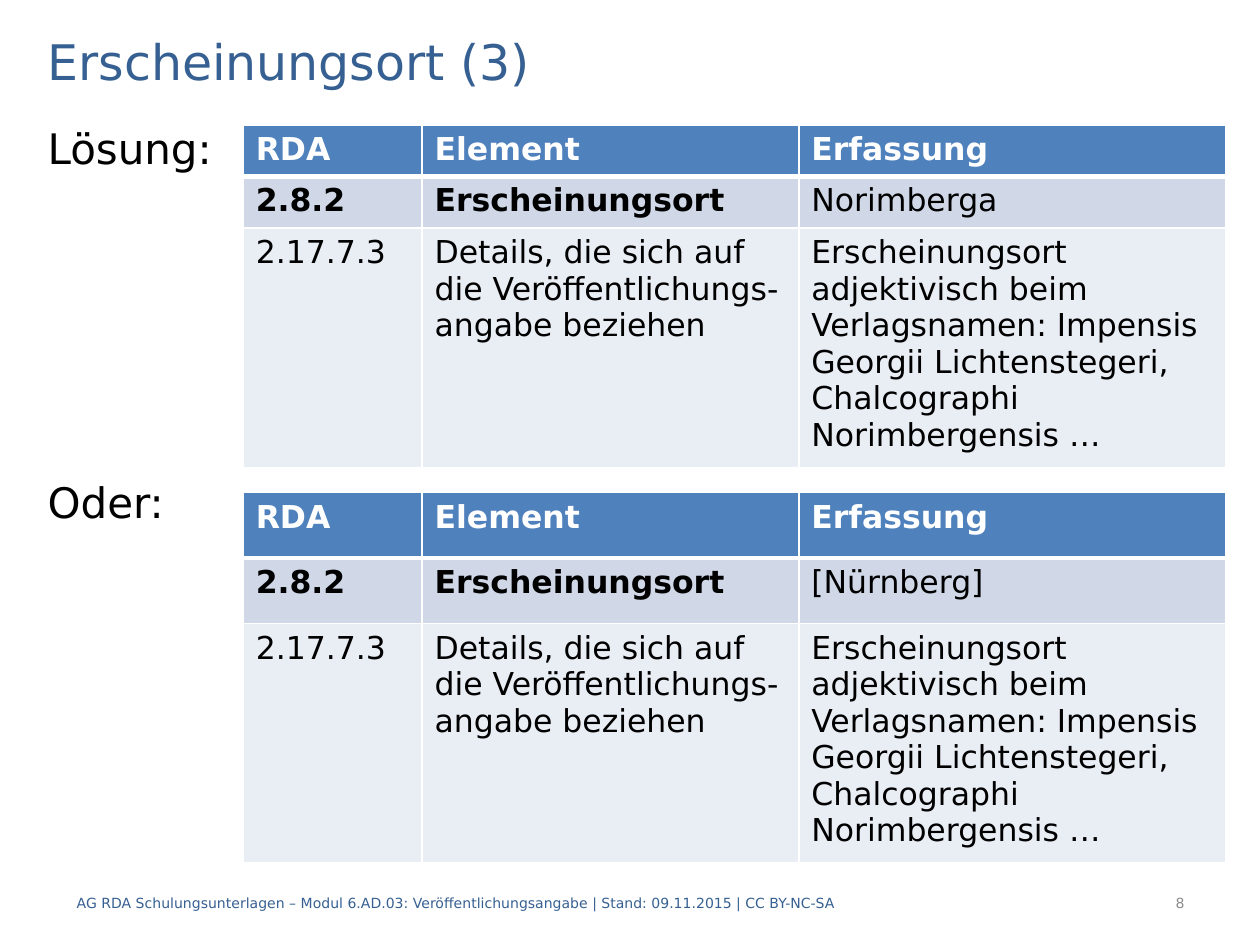
"""Build the slide on the place of publication with its two solution tables."""
from lxml.etree import SubElement
from pptx import Presentation
from pptx.dml.color import RGBColor
from pptx.enum.text import MSO_ANCHOR, PP_ALIGN
from pptx.oxml.ns import qn
from pptx.util import Inches, Pt

FONT = "DejaVu Sans"
BLUE, GREY, BLACK, WHITE = "376092", "8C8C8C", "000000", "FFFFFF"
FILLS = ["4F81BD", "D0D8E8", "E9EDF4"]
COLS = [1.42, 2.99, 3.39]
LEFT = 1.93
HEAD = ["RDA", "Element", "Erfassung"]
DETAIL = [
    "2.17.7.3",
    "Details, die sich auf die Veröffentlichungs- angabe beziehen",
    "Erscheinungsort adjektivisch beim Verlagsnamen: Impensis Georgii "
    "Lichtenstegeri, Chalcographi Norimbergensis …",
]
TABLES = [
    {"top": 0.99, "rows": [0.41, 0.41, 1.84], "place": "Norimberga"},
    {"top": 3.91, "rows": [0.52, 0.52, 1.84], "place": "[Nürnberg]"},
]
FOOTER = ("AG RDA Schulungsunterlagen – Modul 6.AD.03: Veröffentlichungsangabe"
          " | Stand: 09.11.2015 | CC BY-NC-SA")
TEXTS = [
    ("Erscheinungsort (3)", (0.28, 0.2, 9.45, 0.56), {"size": 28, "color": BLUE}),
    ("Lösung:", (0.28, 0.92, 1.6, 0.5), {"size": 24}),
    ("Oder:", (0.28, 3.73, 1.6, 0.5), {"size": 24}),
    (FOOTER, (0.51, 6.97, 6.69, 0.4), {"size": 8, "color": BLUE}),
    ("8", (7.91, 6.97, 1.59, 0.4),
     {"size": 8, "color": GREY, "align": PP_ALIGN.RIGHT}),
]


def rgb(code):
    return RGBColor.from_string(code)


def write(frame, text, size=18, color=BLACK, bold=False, align=PP_ALIGN.LEFT):
    frame.word_wrap = True
    para = frame.paragraphs[0]
    para.alignment = align
    run = para.add_run()
    run.text = text
    font = run.font
    font.name, font.size, font.bold = FONT, Pt(size), bold
    font.color.rgb = rgb(color)


def add_text(slide, text, box, form):
    frame = slide.shapes.add_textbox(*map(Inches, box)).text_frame
    frame.vertical_anchor = MSO_ANCHOR.MIDDLE
    write(frame, text, **form)


def add_edges(cell, row):
    widths = {"L": 1, "R": 1, "T": 3 if row == 1 else 1, "B": 3 if row == 0 else 1}
    props = cell._tc.get_or_add_tcPr()
    for side, width in widths.items():
        line = SubElement(props, qn(f"a:ln{side}"), w=str(Pt(width)))
        SubElement(SubElement(line, qn("a:solidFill")), qn("a:srgbClr"), val=WHITE)


def add_grid(slide, top, rows, place):
    data = [HEAD, ["2.8.2", "Erscheinungsort", place], DETAIL]
    size = map(Inches, (LEFT, top, sum(COLS), sum(rows)))
    table = slide.shapes.add_table(len(rows), len(COLS), *size).table
    for col, width in zip(table.columns, COLS):
        col.width = Inches(width)
    for r, (height, texts) in enumerate(zip(rows, data)):
        table.rows[r].height = Inches(height)
        for c, text in enumerate(texts):
            cell = table.cell(r, c)
            add_edges(cell, r)
            cell.fill.solid()
            cell.fill.fore_color.rgb = rgb(FILLS[r])
            write(cell.text_frame, text, color=BLACK if r else WHITE,
                  bold=r == 0 or (r == 1 and c < 2))


def main():
    deck = Presentation()
    deck.slide_width, deck.slide_height = Inches(10), Inches(7.5)
    slide = deck.slides.add_slide(deck.slide_layouts[6])
    for text, box, form in TEXTS:
        add_text(slide, text, box, form)
    for table in TABLES:
        add_grid(slide, **table)
    deck.save("out.pptx")


if __name__ == "__main__":
    main()
